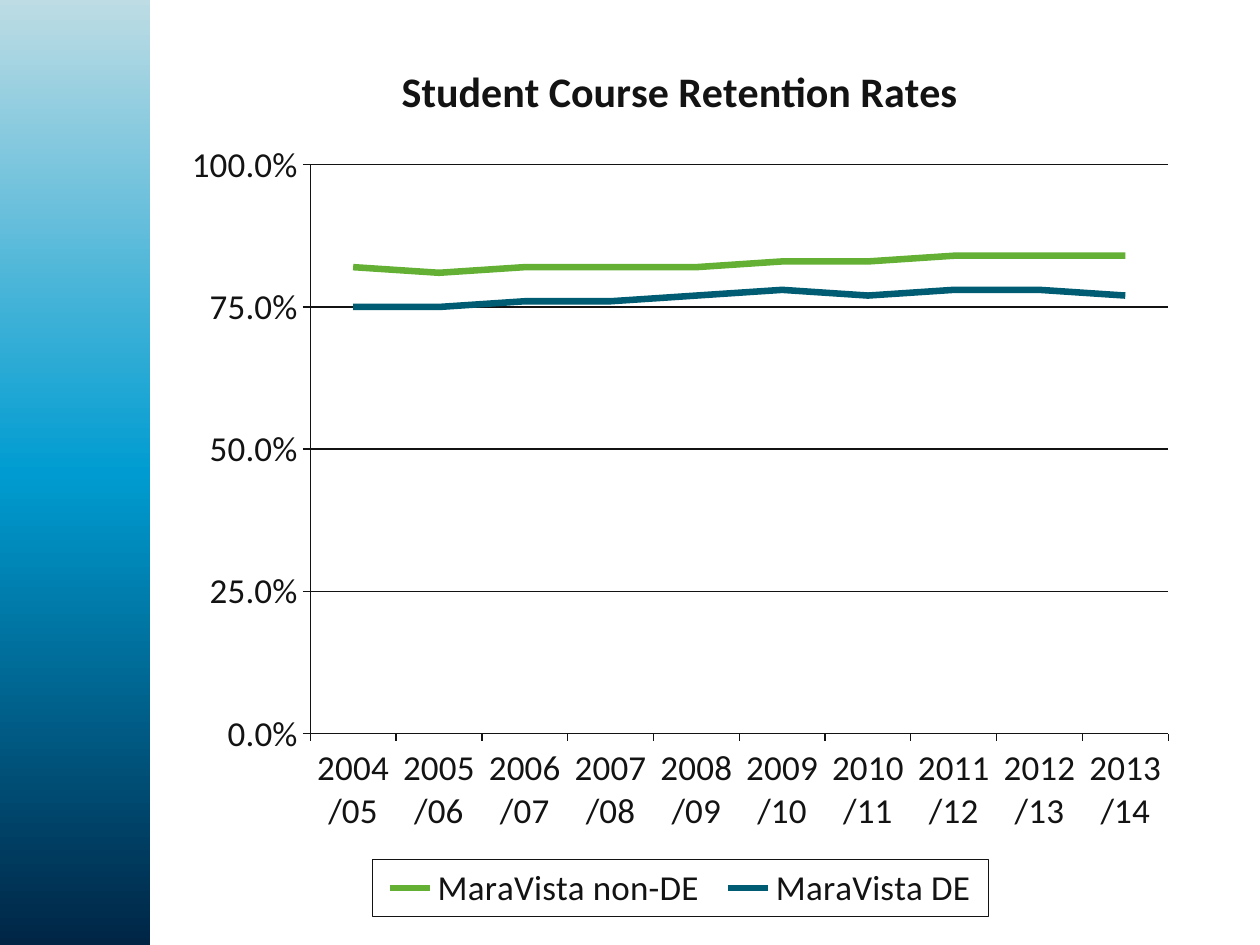
"""Build a slide with a line chart of student course retention rates."""
from copy import deepcopy

from pptx import Presentation
from pptx.chart.data import CategoryChartData
from pptx.dml.color import RGBColor as RGB
from pptx.enum.chart import XL_CHART_TYPE as ChartType
from pptx.enum.chart import XL_LEGEND_POSITION as LegendPos
from pptx.enum.chart import XL_TICK_MARK as Tick
from pptx.enum.shapes import MSO_SHAPE as Shape
from pptx.oxml import parse_xml
from pptx.oxml.ns import nsdecls, qn
from pptx.util import Pt

COLORS = {"ink": "131313", "non_de": "64B034", "de": "005C73"}
BAND_STOPS = [(0, "002545"), (0.5, "009CD1"), (1, "BDDCE4")]
FONT = "Calibri"
TITLE = "Student Course Retention Rates"
YEARS = [f"{y}/{(y + 1) % 100:02d}" for y in range(2004, 2014)]
SERIES = [
    ("MaraVista non-DE", "non_de",
     [0.82, 0.81, 0.82, 0.82, 0.82, 0.83, 0.83, 0.84, 0.84, 0.84]),
    ("MaraVista DE", "de",
     [0.75, 0.75, 0.76, 0.76, 0.77, 0.78, 0.77, 0.78, 0.78, 0.77]),
]
CHART_W, CHART_H = 581, 502.6
PLOT_BOX = {"x": 79.4, "y": 72.6, "w": 490.3, "h": 325.1}
LEGEND_BOX = {"x": 114.9, "y": 469.7, "w": 352, "h": 32.6}
TITLE_POS = {"x": 127.3, "y": 10.4}


def color(key):
    return RGB.from_string(COLORS[key])


def style_font(font, size, bold=False):
    font.name, font.size, font.bold = FONT, Pt(size), bold
    font.color.rgb = color("ink")


def style_line(line, key, width):
    line.color.rgb = color(key)
    line.width = Pt(width)


def place(element, index, box, target=""):
    for old in element.findall(qn("c:layout")):
        element.remove(old)
    modes = "".join(f'<c:{k}Mode val="edge"/>' for k in "xy")
    sizes = "".join(
        f'<c:{k} val="{v / (CHART_W if k in "xw" else CHART_H)}"/>'
        for k, v in box.items())
    element.insert(index, parse_xml(
        f'<c:layout {nsdecls("c")}><c:manualLayout>{target}{modes}{sizes}'
        '</c:manualLayout></c:layout>'))


def add_band(slide):
    sp = slide.shapes.add_shape(Shape.RECTANGLE, 0, 0, Pt(85.7), Pt(540))
    sp.shadow.inherit = False
    sp.line.fill.background()
    sp.fill.gradient()
    sp.fill.gradient_angle = 90
    stops = sp._element.spPr.find(qn("a:gradFill")).find(qn("a:gsLst"))
    stops.insert(1, deepcopy(stops[0]))
    for stop, (position, value) in zip(sp.fill.gradient_stops, BAND_STOPS):
        stop.position = position
        stop.color.rgb = RGB.from_string(value)


def add_retention_chart(slide):
    data = CategoryChartData(number_format="0.0%")
    data.categories = YEARS
    for name, _, values in SERIES:
        data.add_series(name, values)
    chart = slide.shapes.add_chart(
        ChartType.LINE, Pt(97.9), Pt(21.6), Pt(CHART_W), Pt(CHART_H),
        data).chart
    style_font(chart.font, 20)
    chart.plots[0].vary_by_categories = False
    for series, (_, key, _) in zip(chart.plots[0].series, SERIES):
        series.smooth = False
        style_line(series.format.line, key, 3.75)

    for axis in (chart.category_axis, chart.value_axis):
        axis.major_tick_mark, axis.minor_tick_mark = Tick.OUTSIDE, Tick.NONE
        style_font(axis.tick_labels.font, 20)
        style_line(axis.format.line, "ink", 0.75)
    axis = chart.value_axis
    axis.minimum_scale, axis.maximum_scale, axis.major_unit = 0, 1, 0.25
    axis.tick_labels.number_format = "0.0%"
    axis.tick_labels.number_format_is_linked = False
    style_line(axis.major_gridlines.format.line, "ink", 0.75)

    r = chart.chart_title.text_frame.paragraphs[0].add_run()
    r.text = TITLE
    style_font(r.font, 24, bold=True)

    chart.has_legend = True
    legend = chart.legend
    legend.position = LegendPos.BOTTOM
    legend.include_in_layout = False
    style_font(legend.font, 20)
    legend._element.find(qn("c:txPr")).addprevious(parse_xml(
        f'<c:spPr {nsdecls("c", "a")}><a:ln w="{Pt(0.75)}"><a:solidFill>'
        f'<a:srgbClr val="{COLORS["ink"]}"/></a:solidFill></a:ln></c:spPr>'))

    plot_area = chart._chartSpace.chart.plotArea
    place(plot_area, 0, PLOT_BOX, '<c:layoutTarget val="inner"/>')
    place(legend._element, 1, LEGEND_BOX)
    place(chart.chart_title._element, 1, TITLE_POS)


def main():
    prs = Presentation()
    prs.slide_width, prs.slide_height = Pt(720), Pt(540)
    slide = prs.slides.add_slide(prs.slide_layouts[6])
    add_band(slide)
    add_retention_chart(slide)
    prs.save("out.pptx")


if __name__ == "__main__":
    main()
